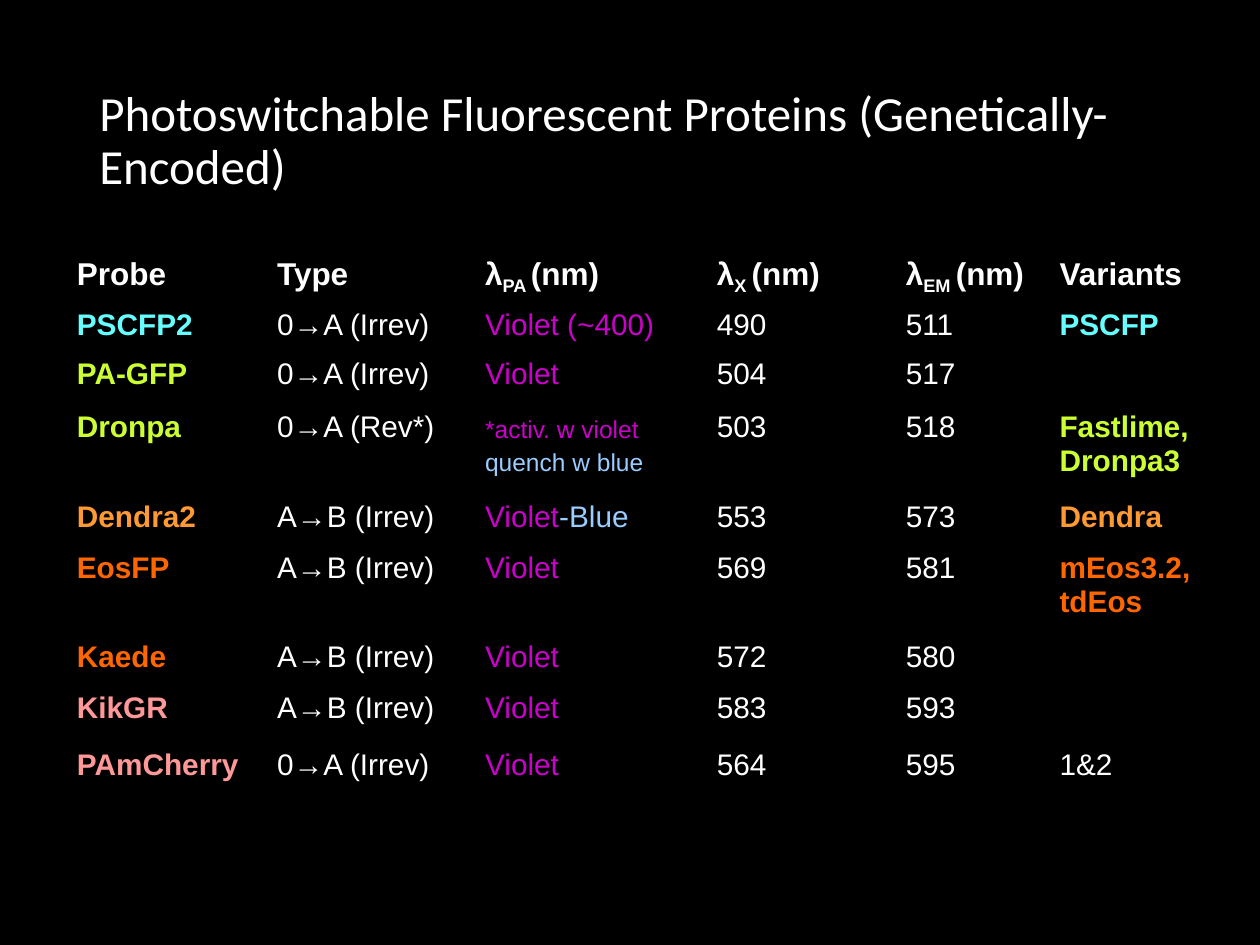
from dataclasses import dataclass

from pptx import Presentation
from pptx.dml.color import RGBColor as Rgb
from pptx.enum.text import MSO_ANCHOR as Anchor
from pptx.util import Inches, Pt


@dataclass(frozen=True)
class Theme:
    """Colours, fonts and type sizes of the slide."""
    black: str = "000000"
    white: str = "FFFFFF"
    cyan: str = "66FFFF"
    lime: str = "CCFF33"
    amber: str = "FF9933"
    orange: str = "FF6600"
    pink: str = "FF9999"
    violet: str = "CC00CC"
    blue: str = "99CCFF"
    head_font: str = "Calibri"
    body_font: str = "Arial"
    title: int = 28
    head: int = 18
    body: int = 17
    small: int = 14


T = Theme()
NO_GRID = "{2D5ABB26-0587-4C30-8999-92F81FD0307C}"
COLS = [1.67, 1.61, 1.79, 1.43, 1.43, 1.31]
ROWS = [0.41, 0.39, 0.42, 0.71, 0.41, 0.7, 0.41, 0.45, 0.38]
INDENTS = [0.24, 0.16, 0.2, 0.25, 0.32, 0.11]
HEADS = ["Probe", "Type", "PA", "X", "EM", "Variants"]
VIOLET = [("Violet", T.violet)]
PROBES = [
    ("PSCFP2", T.cyan, "0→A (Irrev)", [("Violet (~400)", T.violet)], 490, 511, "PSCFP"),
    ("PA-GFP", T.lime, "0→A (Irrev)", VIOLET, 504, 517, ""),
    ("Dronpa", T.lime, "0→A (Rev*)",
     [("*activ. w violet ", T.violet), ("quench w blue", T.blue)], 503, 518, "Fastlime, Dronpa3"),
    ("Dendra2", T.amber, "A→B (Irrev)", VIOLET + [("-Blue", T.blue)], 553, 573, "Dendra"),
    ("EosFP", T.orange, "A→B (Irrev)", VIOLET, 569, 581, "mEos3.2, tdEos"),
    ("Kaede", T.orange, "A→B (Irrev)", VIOLET, 572, 580, ""),
    ("KikGR", T.pink, "A→B (Irrev)", VIOLET, 583, 593, ""),
    ("PAmCherry", T.pink, "0→A (Irrev)", VIOLET, 564, 595, "1&2"),
]


def style(font, name, size, bold=False):
    """Set face, size and weight of a font."""
    font.name, font.size, font.bold = name, Pt(size), bold


def write(cell, parts, size=T.body, bold=False):
    """Fill a cell with (text, colour) runs and return the runs."""
    para = cell.text_frame.paragraphs[0]
    style(para.font, T.body_font, size, bold)
    runs = []
    for text, color in parts:
        run = para.add_run()
        run.text = text
        run.font.color.rgb = Rgb.from_string(color)
        runs.append(run)
    return runs


def add_title(slide, left, top, width, height):
    """Place the slide title in its box."""
    frame = slide.shapes.add_textbox(
        Inches(left), Inches(top), Inches(width), Inches(height)).text_frame
    frame.word_wrap = True
    frame.vertical_anchor = Anchor.MIDDLE
    para = frame.paragraphs[0]
    para.text = "Photoswitchable Fluorescent Proteins (Genetically-Encoded)"
    para.line_spacing = 0.9
    style(para.font, T.head_font, T.title)
    para.font.color.rgb = Rgb.from_string(T.white)


def add_grid(slide, left, top):
    """Add the bare table with its column widths and row heights."""
    frame = slide.shapes.add_table(
        len(ROWS), len(COLS), Inches(left), Inches(top),
        Inches(sum(COLS)), Inches(sum(ROWS)))
    table = frame.table
    table.first_row = table.horz_banding = False
    table._tbl.tblPr.find("{*}tableStyleId").text = NO_GRID
    for col, width in zip(table.columns, COLS):
        col.width = Inches(width)
    for row, height in zip(table.rows, ROWS):
        row.height = Inches(height)
        for cell, indent in zip(row.cells, INDENTS):
            cell.margin_left = Inches(indent)
            cell.margin_top = cell.margin_right = cell.margin_bottom = 0
            cell.fill.solid()
            cell.fill.fore_color.rgb = Rgb.from_string(T.black)
    return table


def fill_head(cells):
    """Write the header row, with wavelengths as subscripted lambdas."""
    for cell, head in zip(cells, HEADS):
        wave = head in ("PA", "X", "EM")
        texts = ["λ", head + " ", "(nm)"] if wave else [head]
        runs = write(cell, [(text, T.white) for text in texts], T.head, True)
        if wave:
            runs[1].font._element.set("baseline", "-21000")


def fill_row(cells, probe):
    """Write one probe across its row."""
    name, color, kind, light, absorb, emit, kin = probe
    write(cells[0], [(name, color)], bold=True)
    write(cells[1], [(kind, T.white)])
    small = name == "Dronpa"
    write(cells[2], light, T.small if small else T.body)
    if small:
        cells[2].text_frame.paragraphs[0].line_spacing = 1.2
    write(cells[3], [(str(absorb), T.white)])
    write(cells[4], [(str(emit), T.white)])
    if kin:
        plain = kin == "1&2"
        write(cells[5], [(kin, T.white if plain else color)], bold=not plain)


def add_probes(slide, left, top):
    """Place the table of probes."""
    table = add_grid(slide, left, top)
    head, *rows = [list(row.cells) for row in table.rows]
    fill_head(head)
    for cells, probe in zip(rows, PROBES):
        fill_row(cells, probe)


def main():
    """Build and save the slide."""
    deck = Presentation()
    deck.slide_width, deck.slide_height = Inches(10), Inches(7.5)
    slide = deck.slides.add_slide(deck.slide_layouts[6])
    slide.background.fill.solid()
    slide.background.fill.fore_color.rgb = Rgb.from_string(T.black)
    add_title(slide, 0.69, 0.4, 8.62, 1.45)
    add_probes(slide, 0.37, 2.04)
    deck.save("out.pptx")


if __name__ == "__main__":
    main()
